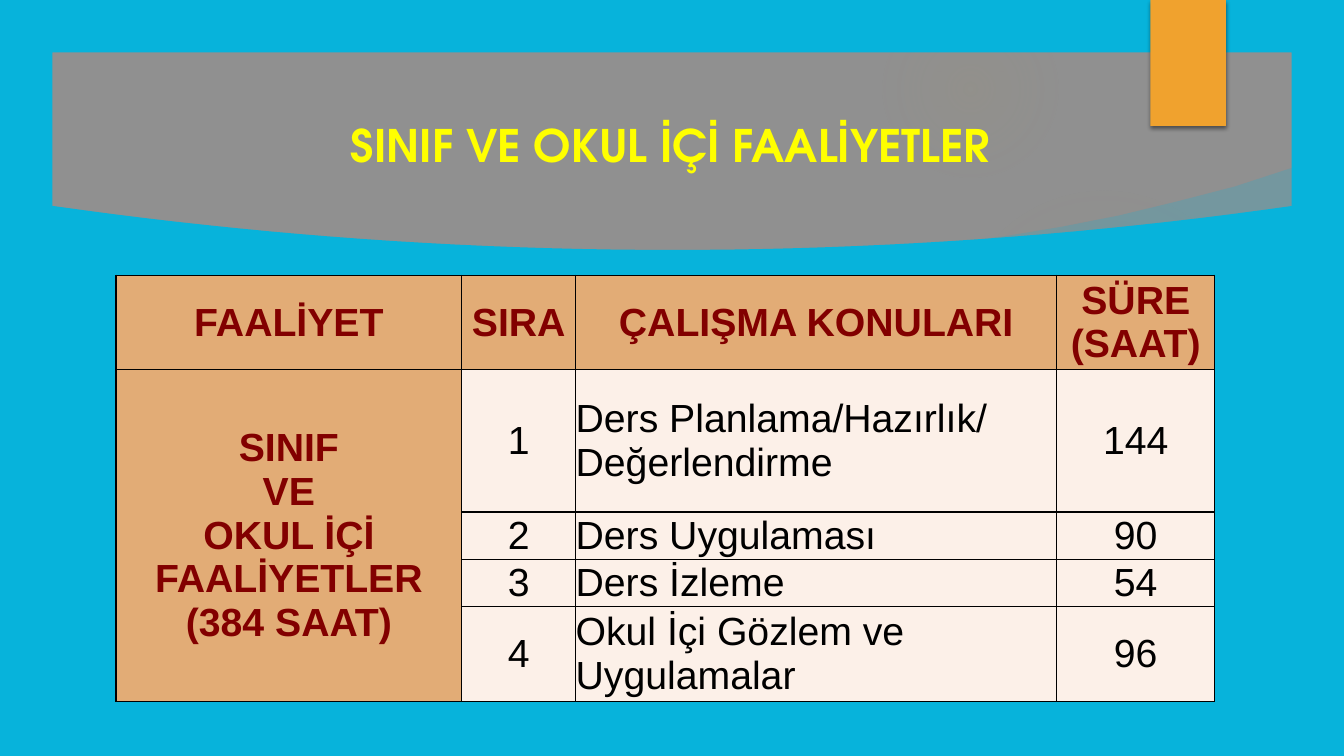
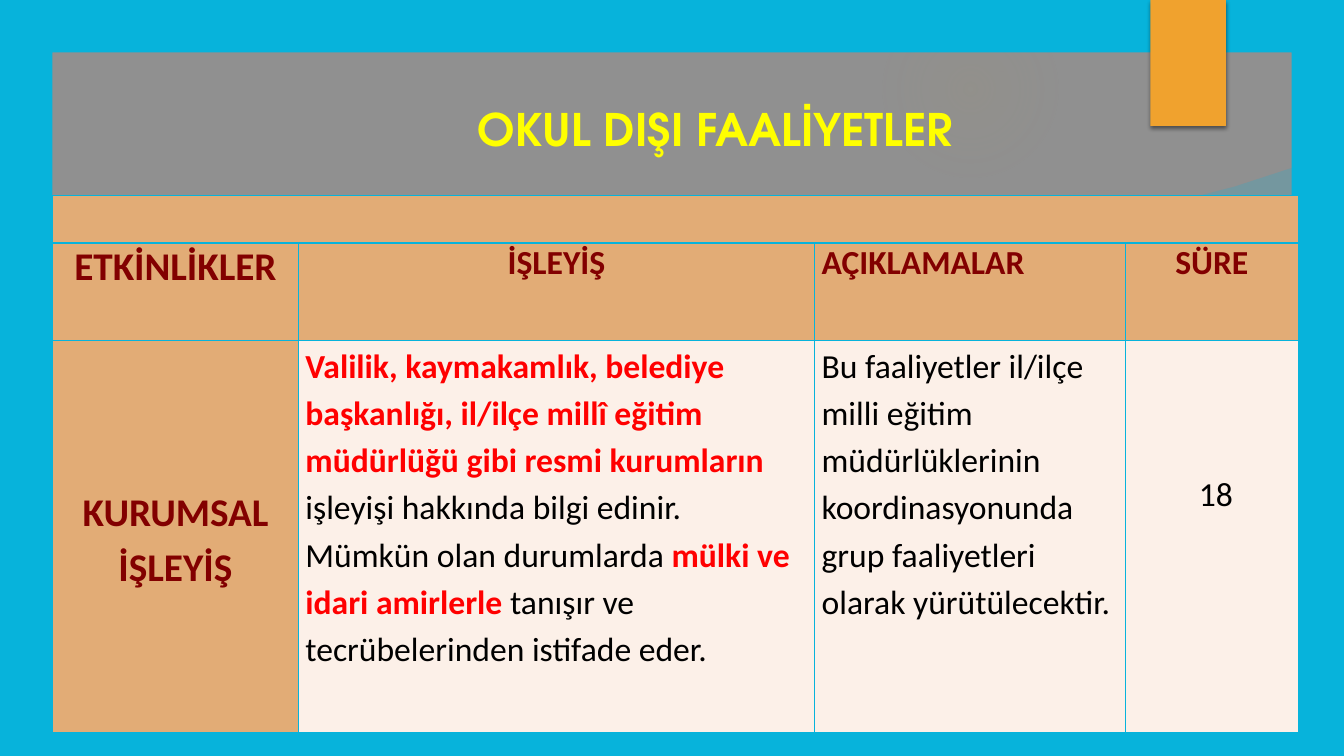
"""Build two slides that list school activities and their hours."""
from lxml import etree
from pptx import Presentation
from pptx.dml.color import RGBColor
from pptx.enum.shapes import MSO_SHAPE
from pptx.enum.text import MSO_ANCHOR, PP_ALIGN
from pptx.oxml import parse_xml
from pptx.oxml.ns import nsdecls, qn
from pptx.util import Inches, Pt

RECTANGLE, OVAL, FRAME = MSO_SHAPE.RECTANGLE, MSO_SHAPE.OVAL, MSO_SHAPE.FRAME
TOP, MIDDLE = MSO_ANCHOR.TOP, MSO_ANCHOR.MIDDLE
LEFT, CENTER = PP_ALIGN.LEFT, PP_ALIGN.CENTER

GRAY = RGBColor(0x90, 0x90, 0x90)
BLUE = RGBColor(0x07, 0xB3, 0xDB)
ORANGE = RGBColor(0xF0, 0xA2, 0x2E)
GLOW = RGBColor(0xA1, 0x95, 0x74)
YELLOW = RGBColor(0xFF, 0xFF, 0x00)
MAROON = RGBColor(0x82, 0x00, 0x00)
RED = RGBColor(0xFF, 0x00, 0x00)
BLACK = RGBColor(0x00, 0x00, 0x00)
TAN = RGBColor(0xE2, 0xAC, 0x76)
CREAM = RGBColor(0xFC, 0xF0, 0xE8)

WIDTH, HEIGHT, FRAME_WIDTH = 13.33, 7.5, 0.52
GLOWS = [
    ((9.41, 1.83, 3.08), [(0, 7), (36, 6), (69, 0)]),
    ((8.75, 0.01, 1.75), [(0, 14), (36, 7), (73, 0)]),
]
SWOOSH = [(9.34, 2.5), (12.89, 2.14), (12.83, 1.66), (12.25, 1.85), (11.67, 2),
          (11.09, 2.14), (10.53, 2.25), (9.99, 2.34), (9.3, 2.43)]
PANEL_LEFT, PANEL_RIGHT, PANEL_TOP, PANEL_BOTTOM = 0.5, 12.84, 2.04, 7
PANEL_SAG, PANEL_STEPS = 0.44, 40

SCHOOL = {
    "title": "SINIF VE OKUL İÇİ FAALİYETLER",
    "title_box": (2.65, 0.76, 8, 1.35),
    "place": (1.15, 2.73),
    "columns": [3.43, 1.13, 4.77, 1.57],
    "rows": [0.94, 1.41, 0.47, 0.47, 0.94],
    "merge": ((1, 0), (4, 0)),
    "border": BLACK,
    "inset": 0,
    "header_rows": 1,
    "cells": [
        ["FAALİYET", "SIRA", "ÇALIŞMA KONULARI", "SÜRE\n(SAAT)"],
        ["SINIF\nVE\nOKUL İÇİ FAALİYETLER\n(384 SAAT)", "1",
         "Ders Planlama/Hazırlık/\nDeğerlendirme", "144"],
        ["", "2", "Ders Uygulaması", "90"],
        ["", "3", "Ders İzleme", "54"],
        ["", "4", "Okul İçi Gözlem ve Uygulamalar", "96"],
    ],
    "format": {"font": "Arial", "size": 28, "anchor": MIDDLE, "align": CENTER},
    "special": {(row, 2): {"align": LEFT} for row in range(1, 5)},
}
OUTSIDE = {
    "title": "OKUL DIŞI FAALİYETLER",
    "title_box": (4.3, 0.76, 5.59, 1.03),
    "place": (0.52, 1.94),
    "columns": [2.44, 5.12, 3.08, 1.72],
    "rows": [0.47, 0.97, 3.89],
    "merge": ((0, 0), (0, 3)),
    "border": BLUE,
    "inset": 0.07,
    "header_rows": 2,
    "cells": [
        ["", "", "", ""],
        ["ETKİNLİKLER", "İŞLEYİŞ", "AÇIKLAMALAR", "SÜRE"],
        ["KURUMSAL İŞLEYİŞ",
         [("Valilik, kaymakamlık, belediye başkanlığı, il/ilçe millî eğitim "
           "müdürlüğü gibi resmi kurumların ", True),
          ("işleyişi hakkında bilgi edinir. Mümkün olan durumlarda ", False),
          ("mülki ve idari amirlerle", True),
          (" tanışır ve tecrübelerinden istifade eder.", False)],
         "Bu faaliyetler il/ilçe milli eğitim müdürlüklerinin "
         "koordinasyonunda grup faaliyetleri olarak yürütülecektir.",
         "18"],
    ],
    "format": {"font": "Calibri", "size": 24, "anchor": TOP, "align": LEFT},
    "special": {
        (1, 0): {"size": 28, "align": CENTER},
        (1, 1): {"align": CENTER},
        (1, 3): {"align": CENTER},
        (2, 0): {"size": 28, "align": CENTER, "anchor": MIDDLE, "spacing": 1.15},
        (2, 1): {"spacing": 1.15},
        (2, 2): {"spacing": 1.15},
        (2, 3): {"align": CENTER, "spacing": 1.15, "top": 1.27, "left": 0.15},
    },
}


def write_text(frame, content, *, font, size, color, bold=False, align=CENTER, spacing=None):
    """Write lines of text, or one paragraph of (text, emphasised) runs."""
    if isinstance(content, str):
        lines = [[(line, False)] for line in content.split("\n")]
    else:
        lines = [content]
    for index, runs in enumerate(lines):
        paragraph = frame.add_paragraph() if index else frame.paragraphs[0]
        paragraph.alignment = align
        if spacing:
            paragraph.line_spacing = spacing
        for text, emphasised in runs:
            run = paragraph.add_run()
            run.text = text
            run.font.name = font
            run.font.size = Pt(size)
            run.font.bold = bold or emphasised
            run.font.color.rgb = RED if emphasised else color


def paint(shape, color):
    """Give a shape a plain fill without line or shadow."""
    shape.shadow.inherit = False
    shape.fill.solid()
    shape.fill.fore_color.rgb = color
    shape.line.fill.background()
    return shape


def add_outline(slide, points, color):
    """Draw a closed polygon through points in inches."""
    corners = [(Inches(x), Inches(y)) for x, y in points]
    builder = slide.shapes.build_freeform(*corners[0], scale=1.0)
    builder.add_line_segments(corners[1:], close=True)
    return paint(builder.convert_to_shape(), color)


def add_glow(slide, left, top, diameter, stops):
    """Draw a circle that fades out from its centre."""
    size = Inches(diameter)
    shape = slide.shapes.add_shape(OVAL, Inches(left), Inches(top), size, size)
    shape.shadow.inherit = False
    shape.line.fill.background()
    stop_xml = "".join(
        f'<a:gs pos="{position * 1000}"><a:srgbClr val="{GLOW}">'
        f'<a:alpha val="{alpha * 1000}"/></a:srgbClr></a:gs>'
        for position, alpha in stops)
    gradient = parse_xml(
        f'<a:gradFill {nsdecls("a")} rotWithShape="1"><a:gsLst>{stop_xml}</a:gsLst>'
        '<a:path path="circle"><a:fillToRect l="50000" t="50000" r="50000" b="50000"/>'
        '</a:path></a:gradFill>')
    shape._element.spPr.find(qn("a:prstGeom")).addnext(gradient)


def add_backdrop(slide):
    """Draw the background, curved panel, frame and tab."""
    slide.background.fill.solid()
    slide.background.fill.fore_color.rgb = GRAY
    for place, stops in GLOWS:
        add_glow(slide, *place, stops)

    swoosh = add_outline(slide, SWOOSH, BLUE)
    swoosh_color = swoosh._element.spPr.find(".//" + qn("a:srgbClr"))
    etree.SubElement(swoosh_color, qn("a:alpha"), val="20000")

    curve = []
    for step in range(PANEL_STEPS + 1):
        part = step / PANEL_STEPS
        curve.append((PANEL_LEFT + part * (PANEL_RIGHT - PANEL_LEFT),
                      PANEL_TOP + 4 * PANEL_SAG * part * (1 - part)))
    add_outline(slide, curve + [(PANEL_RIGHT, PANEL_BOTTOM), (PANEL_LEFT, PANEL_BOTTOM)], BLUE)

    frame = slide.shapes.add_shape(FRAME, 0, 0, Inches(WIDTH), Inches(HEIGHT))
    frame.adjustments[0] = FRAME_WIDTH / HEIGHT
    paint(frame, BLUE)

    tab = paint(slide.shapes.add_shape(
        RECTANGLE, Inches(11.41), 0, Inches(0.75), Inches(1.25)), ORANGE)
    tab._element.spPr.find(qn("a:effectLst")).append(parse_xml(
        f'<a:outerShdw {nsdecls("a")} blurRad="{Pt(3)}" dist="{Pt(2)}" dir="5400000" '
        'rotWithShape="0"><a:srgbClr val="000000"><a:alpha val="45000"/></a:srgbClr>'
        '</a:outerShdw>'))


def add_title(slide, text, box):
    """Add the yellow title line."""
    frame = slide.shapes.add_textbox(*map(Inches, box)).text_frame
    frame.word_wrap = True
    frame.vertical_anchor = MIDDLE
    write_text(frame, text, font="TeX Gyre Adventor", size=32, color=YELLOW, bold=True)


def style_cell(cell, fill, border, inset, anchor, top=0, left=None):
    """Set the borders, fill, margins and anchor of a cell."""
    properties = cell._tc.get_or_add_tcPr()
    for side in ("lnL", "lnR", "lnT", "lnB"):
        properties.append(parse_xml(
            f'<a:{side} {nsdecls("a")} w="{Pt(1)}"><a:solidFill>'
            f'<a:srgbClr val="{border}"/></a:solidFill></a:{side}>'))
    cell.fill.solid()
    cell.fill.fore_color.rgb = fill
    cell.margin_left = Inches(inset if left is None else left)
    cell.margin_right = Inches(inset)
    cell.margin_top, cell.margin_bottom = Inches(top), 0
    cell.vertical_anchor = anchor


def add_activity_table(slide, data):
    """Add the table with tan headings and cream body cells."""
    columns, rows = data["columns"], data["rows"]
    table = slide.shapes.add_table(
        len(rows), len(columns), *map(Inches, data["place"]),
        Inches(sum(columns)), Inches(sum(rows))).table
    table.first_row = table.horz_banding = False
    for column, width in zip(table.columns, columns):
        column.width = Inches(width)
    for row, height in zip(table.rows, rows):
        row.height = Inches(height)
    first, last = data["merge"]
    table.cell(*first).merge(table.cell(*last))

    for row, contents in enumerate(data["cells"]):
        for column, content in enumerate(contents):
            cell = table.cell(row, column)
            heading = row < data["header_rows"] or column == 0
            options = data["format"] | data["special"].get((row, column), {})
            layout = {key: options.pop(key) for key in ("anchor", "top", "left") if key in options}
            style_cell(cell, TAN if heading else CREAM, data["border"], data["inset"], **layout)
            if content:
                write_text(cell.text_frame, content, color=MAROON if heading else BLACK,
                           bold=heading, **options)


def main():
    """Build and save the presentation."""
    presentation = Presentation()
    presentation.slide_width, presentation.slide_height = Inches(WIDTH), Inches(HEIGHT)
    for data in (SCHOOL, OUTSIDE):
        slide = presentation.slides.add_slide(presentation.slide_layouts[6])
        add_backdrop(slide)
        add_title(slide, data["title"], data["title_box"])
        add_activity_table(slide, data)
    presentation.save("out.pptx")


if __name__ == "__main__":
    main()
